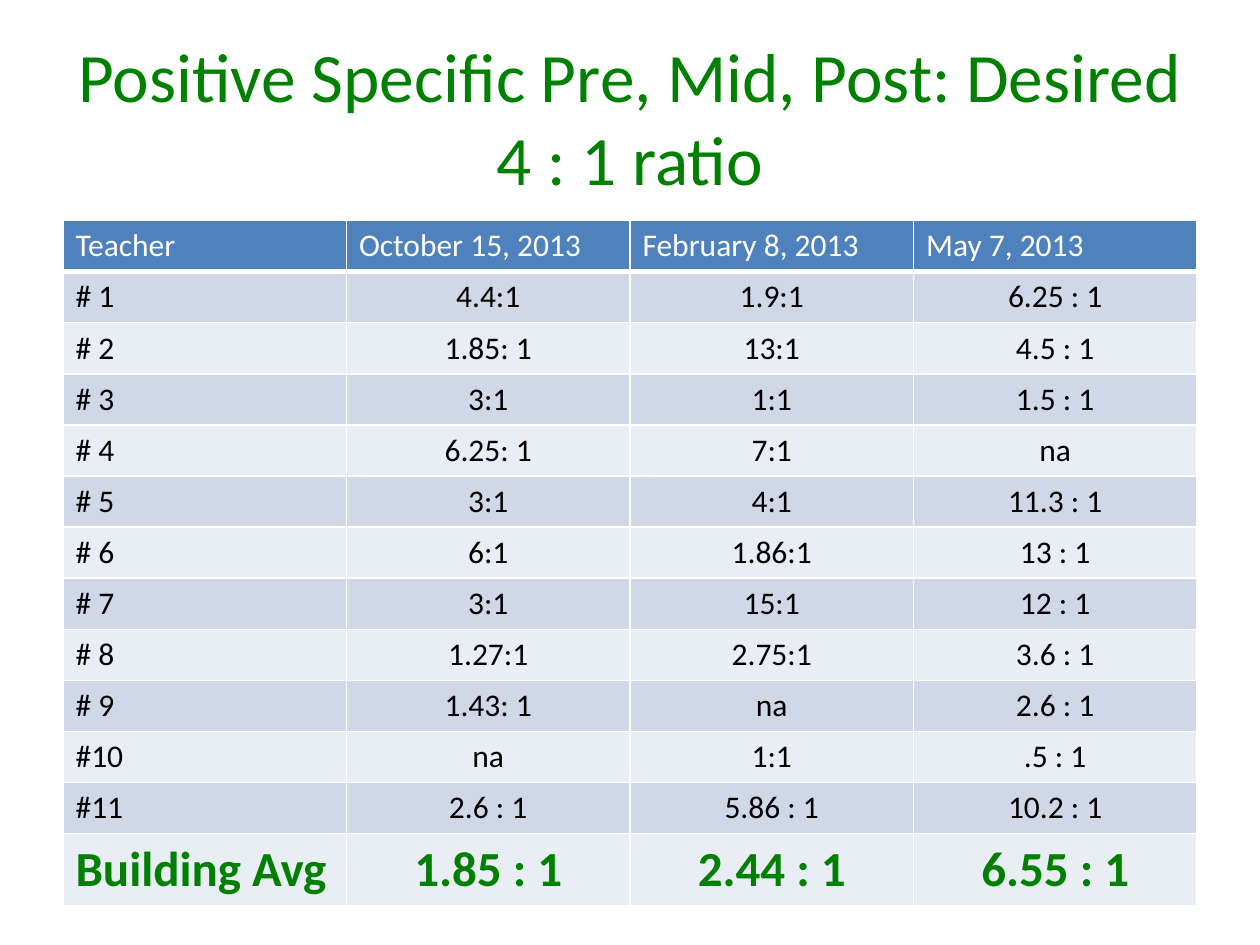
from lxml.etree import SubElement
from pptx import Presentation
from pptx.dml.color import RGBColor
from pptx.enum.text import MSO_ANCHOR as Anchor, MSO_AUTO_SIZE as AutoSize, PP_ALIGN as Align
from pptx.oxml.ns import qn
from pptx.util import Pt

FONT = "Calibri"
GREEN = RGBColor(0x00, 0x80, 0x00)
BLUE = RGBColor(0x4F, 0x81, 0xBD)
DARK_BAND = RGBColor(0xD0, 0xD8, 0xE8)
LIGHT_BAND = RGBColor(0xE9, 0xED, 0xF4)
WHITE = RGBColor(0xFF, 0xFF, 0xFF)
BLACK = RGBColor(0x00, 0x00, 0x00)

TITLE = "Positive Specific Pre, Mid, Post: Desired 4 : 1 ratio"
HEADINGS = ("Teacher", "October 15, 2013", "February 8, 2013", "May 7, 2013")
TEACHER_RATIOS = (
    ("# 1", "4.4:1", "1.9:1", "6.25 : 1"),
    ("# 2", "1.85: 1", "13:1", "4.5 : 1"),
    ("# 3", "3:1", "1:1", "1.5 : 1"),
    ("# 4", "6.25: 1", "7:1", "na"),
    ("# 5", "3:1", "4:1", "11.3 : 1"),
    ("# 6", "6:1", "1.86:1", "13 : 1"),
    ("# 7", "3:1", "15:1", "12 : 1"),
    ("# 8", "1.27:1", "2.75:1", "3.6 : 1"),
    ("# 9", "1.43: 1", "na", "2.6 : 1"),
    ("#10", "na", "1:1", ".5 : 1"),
    ("#11", "2.6 : 1", "5.86 : 1", "10.2 : 1"),
)
BUILDING_AVERAGE = ("Building Avg", "1.85 : 1", "2.44 : 1", "6.55 : 1")

LEFT, WIDTH = Pt(36), Pt(648)
ROW_HEIGHT, AVERAGE_HEIGHT = Pt(29.2), Pt(41)


def write_text(frame, text, size, color, align, bold=False):
    frame.text = text
    paragraph = frame.paragraphs[0]
    paragraph.alignment = align
    font = paragraph.runs[0].font
    font.name, font.size, font.bold = FONT, Pt(size), bold
    font.color.rgb = color


def add_title(slide):
    title = slide.shapes.title
    title.left, title.top, title.width, title.height = LEFT, Pt(21.6), WIDTH, Pt(90)
    frame = title.text_frame
    write_text(frame, TITLE, 39.6, GREEN, Align.CENTER)
    frame.word_wrap = True
    frame.auto_size = AutoSize.NONE
    frame.vertical_anchor = Anchor.MIDDLE


def add_borders(cell, bottom_width):
    properties = cell._tc.get_or_add_tcPr()
    for side, width in (("L", 1), ("R", 1), ("T", 1), ("B", bottom_width)):
        line = SubElement(properties, qn(f"a:ln{side}"), w=str(Pt(width)))
        fill = SubElement(line, qn("a:solidFill"))
        SubElement(fill, qn("a:srgbClr"), val=str(WHITE))


def fill_row(table, row_index, texts, band, color, size=18, bold=False,
             value_align=Align.CENTER, bottom_width=1):
    for column_index, text in enumerate(texts):
        cell = table.cell(row_index, column_index)
        align = value_align if column_index else Align.LEFT
        write_text(cell.text_frame, text, size, color, align, bold)
        add_borders(cell, bottom_width)
        cell.fill.solid()
        cell.fill.fore_color.rgb = band


def add_ratio_table(slide):
    average_index = len(TEACHER_RATIOS) + 1
    height = ROW_HEIGHT * average_index + AVERAGE_HEIGHT
    table = slide.shapes.add_table(
        average_index + 1, len(HEADINGS), LEFT, Pt(126), WIDTH, height).table
    for row in table.rows:
        row.height = ROW_HEIGHT
    table.rows[average_index].height = AVERAGE_HEIGHT

    fill_row(table, 0, HEADINGS, BLUE, WHITE, value_align=Align.LEFT, bottom_width=3)
    for row_index, ratios in enumerate(TEACHER_RATIOS, start=1):
        band = DARK_BAND if row_index % 2 else LIGHT_BAND
        fill_row(table, row_index, ratios, band, BLACK)
    fill_row(table, average_index, BUILDING_AVERAGE, LIGHT_BAND, GREEN, size=28, bold=True)


def main():
    presentation = Presentation()
    presentation.slide_width, presentation.slide_height = Pt(720), Pt(540)
    slide = presentation.slides.add_slide(presentation.slide_layouts.get_by_name("Title Only"))
    add_title(slide)
    add_ratio_table(slide)
    presentation.save("out.pptx")


if __name__ == "__main__":
    main()
